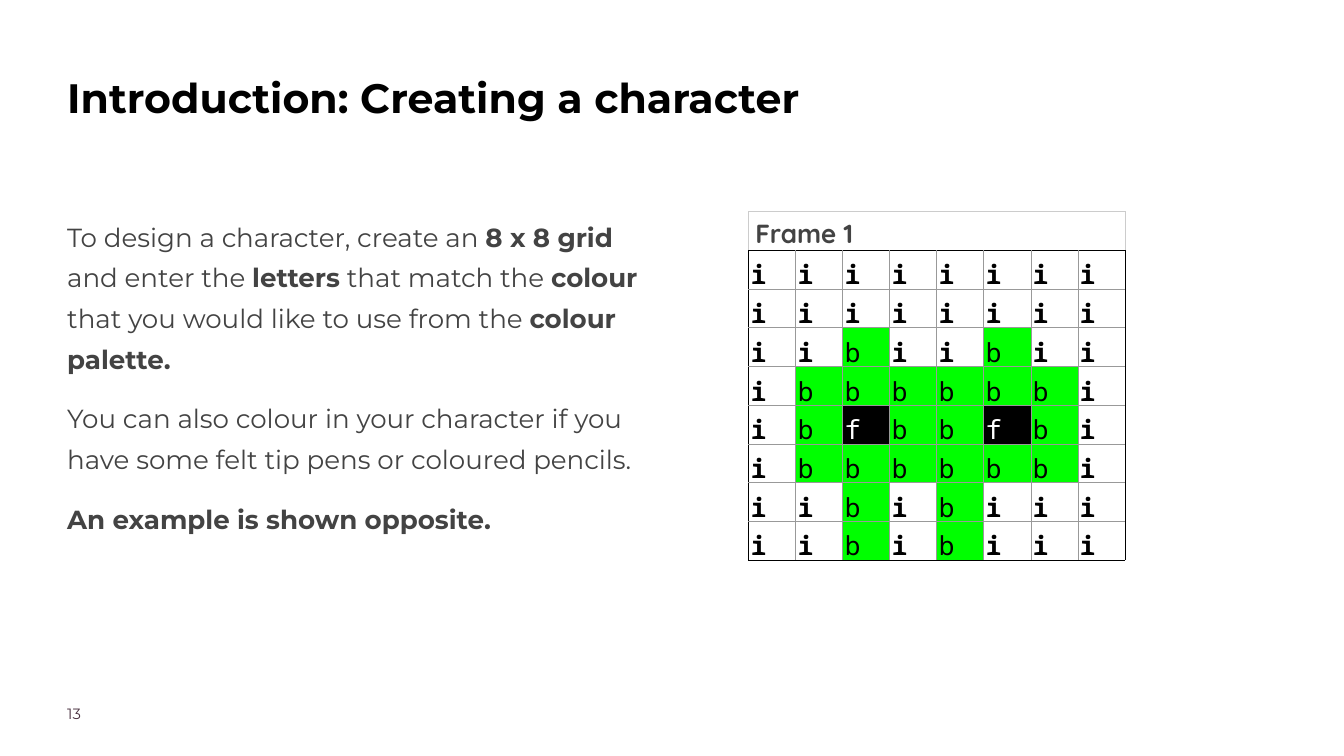
import lxml.etree
import pptx
import pptx.dml.color
import pptx.enum.text
import pptx.oxml.ns
import pptx.util

Cm = pptx.util.Cm
Pt = pptx.util.Pt

BLACK, WHITE, GREEN = "000000", "FFFFFF", "00FF00"
TEXT, GRID, HEADER_EDGE = "434343", "999999", "CCCCCC"
CHARACTER = [
    "iiiiiiii",
    "iiiiiiii",
    "iibiibii",
    "ibbbbbbi",
    "ibfbbfbi",
    "ibbbbbbi",
    "iibibiii",
    "iibibiii",
]
PALETTE = {"i": (WHITE, BLACK), "b": (GREEN, BLACK), "f": (BLACK, WHITE)}
INTRO = [
    "To design a character, create an **8 x 8 grid** and enter the **letters** "
    "that match the **colour **that you would like to use from the **colour palette.**",
    "You can also colour in your character if you have some felt tip pens "
    "or coloured pencils.",
    "**An example is shown opposite.**",
]


def rgb(color):
    return pptx.dml.color.RGBColor.from_string(color)


def set_font(font, name, size, color):
    font.name, font.size = name, Pt(size)
    font.color.rgb = rgb(color)


def add_text(s, left, top, width, height, paragraphs, size, color, spacing, gap=0):
    sp = s.shapes.add_textbox(Cm(left), Cm(top), Cm(width), Cm(height))
    tf = sp.text_frame
    tf.word_wrap = True
    tf.margin_left = tf.margin_top = tf.margin_right = tf.margin_bottom = 0
    for i, text in enumerate(paragraphs):
        p = tf.add_paragraph() if i else tf.paragraphs[0]
        p.line_spacing = spacing
        if i:
            p.space_before = Pt(gap)
        set_font(p.font, "Montserrat", size, color)
        for j, part in enumerate(text.split("**")):
            if part:
                r = p.add_run()
                r.text = part
                r.font.bold = j % 2 == 1


def set_borders(cell, **edges):
    tcPr = cell._tc.get_or_add_tcPr()
    for side in "LRTB":
        ln = lxml.etree.SubElement(
            tcPr, pptx.oxml.ns.qn(f"a:ln{side}"), w=str(Pt(0.75)))
        fill = lxml.etree.SubElement(ln, pptx.oxml.ns.qn("a:solidFill"))
        lxml.etree.SubElement(
            fill, pptx.oxml.ns.qn("a:srgbClr"), val=edges[side])


def fill_cell(cell, text, font, color, bold, margin):
    cell.vertical_anchor = pptx.enum.text.MSO_ANCHOR.BOTTOM
    cell.margin_left = cell.margin_right = Cm(margin)
    cell.margin_top = cell.margin_bottom = Cm(0.05)
    p = cell.text_frame.paragraphs[0]
    p.line_spacing = 1.15
    set_font(p.font, font, 28, color)
    p.font.bold = bold
    p.add_run().text = text


def add_character_grid(s, left, top, width, height):
    n = len(CHARACTER)
    sp = s.shapes.add_table(n + 1, n, Cm(left), Cm(top), Cm(width), Cm(height))
    table = sp.table
    table.first_row = table.horz_banding = False
    for row in table.rows:
        row.height = Cm(0.56)
    sp.height = Cm(height)

    header = table.cell(0, 0)
    header.merge(table.cell(0, n - 1))
    for col in range(n):
        cell = table.cell(0, col)
        set_borders(cell, L=HEADER_EDGE, R=HEADER_EDGE, T=HEADER_EDGE, B=BLACK)
        cell.fill.background()
    fill_cell(header, "Frame 1", "Quicksand", TEXT, True, 0.25)

    for row, letters in enumerate(CHARACTER):
        for col, letter in enumerate(letters):
            cell = table.cell(row + 1, col)
            background, color = PALETTE[letter]
            set_borders(
                cell,
                L=BLACK if col == 0 else GRID,
                R=BLACK if col == n - 1 else GRID,
                T=BLACK if row == 0 else GRID,
                B=BLACK if row == n - 1 else GRID,
            )
            cell.fill.solid()
            cell.fill.fore_color.rgb = rgb(background)
            fill_cell(cell, letter, "Noto Sans Mono", color, letter == "i", 0.08)


def main():
    prs = pptx.Presentation()
    prs.slide_width, prs.slide_height = Cm(50.8), Cm(28.58)
    s = prs.slides.add_slide(prs.slide_layouts[6])
    add_text(s, 2.54, 2.46, 36.12, 4.52,
             ["**Introduction: Creating a character**"], 44, BLACK, 1.15)
    add_text(s, 2.54, 8, 21.95, 16.56, INTRO, 28, TEXT, 1.3, gap=20)
    add_text(s, 2.54, 26.62, 3.99, 0.99, ["13"], 16, "4B3241", 1.0)
    add_character_grid(s, 28.3, 8, 14.22, 8.33)
    prs.save("out.pptx")


if __name__ == "__main__":
    main()
